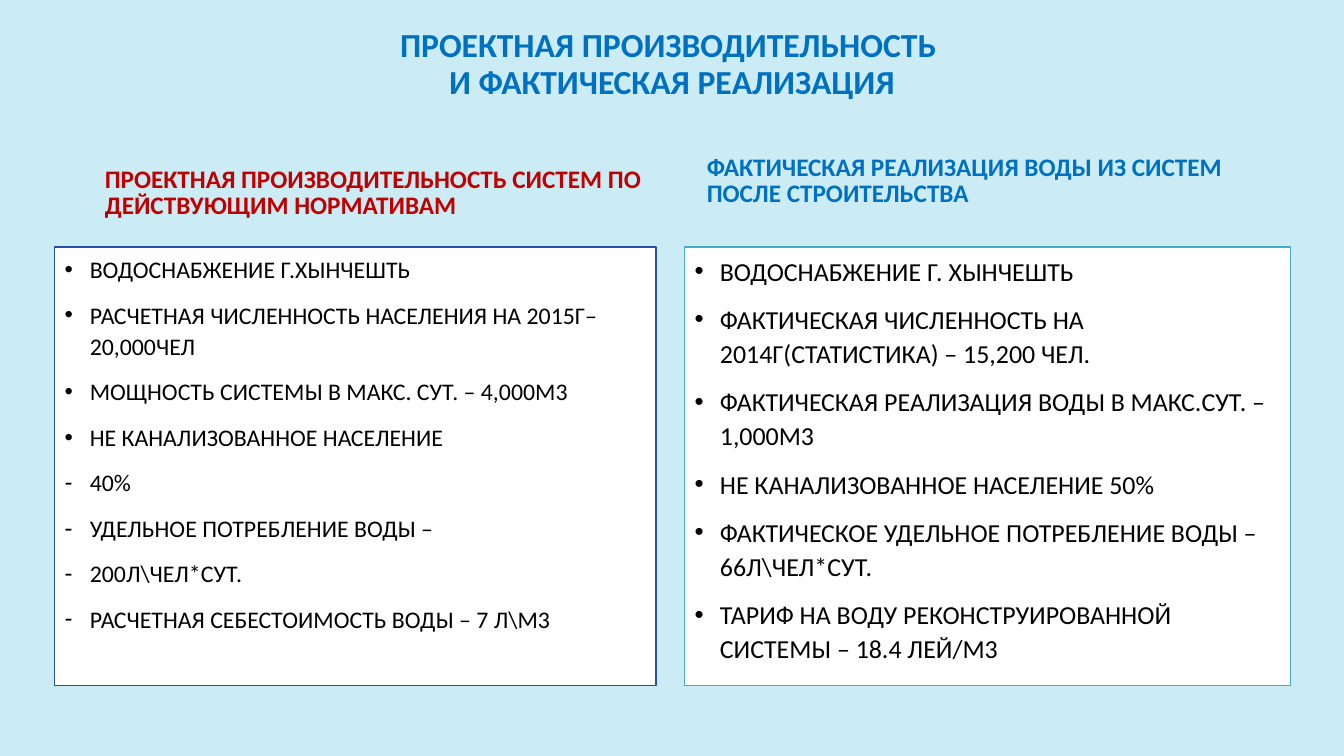
from dataclasses import dataclass

from lxml import etree
from pptx import Presentation
from pptx.dml.color import RGBColor
from pptx.enum import text as t
from pptx.oxml import ns
from pptx.util import Inches, Pt

SKY = RGBColor(0xCB, 0xEC, 0xF5)
BLUE = RGBColor(0x00, 0x70, 0xC0)
RED = RGBColor(0xC0, 0x00, 0x00)
NAVY = RGBColor(0x27, 0x4F, 0xA4)
AQUA = RGBColor(0x48, 0xA8, 0xD0)
WHITE = RGBColor(0xFF, 0xFF, 0xFF)
BLACK = RGBColor(0x00, 0x00, 0x00)
FONT = "Calibri"

Area = tuple[float, float, float, float]


@dataclass
class Column:
    head: str
    tint: RGBColor
    head_area: Area
    list_area: Area
    edge: RGBColor
    size: float
    dots: list[str]
    dashes: list[str]


COLUMNS = [
    Column(
        "ПРОЕКТНАЯ ПРОИЗВОДИТЕЛЬНОСТЬ СИСТЕМ ПО ДЕЙСТВУЮЩИМ НОРМАТИВАМ",
        RED, (0.94, 1.49, 5.58, 0.74), (0.54, 2.45, 5.97, 4.35), NAVY, 17,
        [
            "ВОДОСНАБЖЕНИЕ Г.ХЫНЧЕШТЬ",
            "РАСЧЕТНАЯ ЧИСЛЕННОСТЬ НАСЕЛЕНИЯ НА 2015Г– 20,000ЧЕЛ",
            "МОЩНОСТЬ СИСТЕМЫ В МАКС. СУТ. – 4,000М3",
            "НЕ КАНАЛИЗОВАННОЕ НАСЕЛЕНИЕ",
        ],
        [
            "40%",
            "УДЕЛЬНОЕ ПОТРЕБЛЕНИЕ ВОДЫ –",
            "200Л\\ЧЕЛ*СУТ.",
            "РАСЧЕТНАЯ СЕБЕСТОИМОСТЬ ВОДЫ – 7 Л\\М3",
        ],
    ),
    Column(
        "ФАКТИЧЕСКАЯ РЕАЛИЗАЦИЯ ВОДЫ ИЗ СИСТЕМ ПОСЛЕ СТРОИТЕЛЬСТВА",
        BLUE, (6.91, 1.37, 5.34, 0.74), (6.79, 2.45, 6.01, 4.35), AQUA, 18.5,
        [
            "ВОДОСНАБЖЕНИЕ Г. ХЫНЧЕШТЬ",
            "ФАКТИЧЕСКАЯ ЧИСЛЕННОСТЬ НА 2014Г(СТАТИСТИКА) – 15,200 ЧЕЛ.",
            "ФАКТИЧЕСКАЯ РЕАЛИЗАЦИЯ ВОДЫ В МАКС.СУТ. – 1,000М3",
            "НЕ КАНАЛИЗОВАННОЕ НАСЕЛЕНИЕ 50%",
            "ФАКТИЧЕСКОЕ УДЕЛЬНОЕ ПОТРЕБЛЕНИЕ ВОДЫ – 66Л\\ЧЕЛ*СУТ.",
            "ТАРИФ НА ВОДУ РЕКОНСТРУИРОВАННОЙ СИСТЕМЫ – 18.4 ЛЕЙ/М3",
        ],
        [],
    ),
]


def place(shape, area: Area, anchor: t.MSO_ANCHOR):
    shape.left, shape.top, shape.width, shape.height = map(Inches, area)
    frame = shape.text_frame
    frame.word_wrap = True
    frame.auto_size = t.MSO_AUTO_SIZE.NONE
    frame.vertical_anchor = anchor
    return frame


def write(para, words: str, size: float, color: RGBColor, bold: bool) -> None:
    run = para.add_run()
    run.text = words
    run.font.name = FONT
    run.font.size = Pt(size)
    run.font.bold = bold
    run.font.color.rgb = color


def mark(para, sign: str) -> None:
    props = para._p.get_or_add_pPr()
    props.set("marL", str(Inches(0.25)))
    props.set("indent", str(-Inches(0.25)))
    tint = etree.SubElement(props, ns.qn("a:buClr"))
    etree.SubElement(tint, ns.qn("a:srgbClr"), val=str(BLACK))
    etree.SubElement(props, ns.qn("a:buFont"), typeface="Arial")
    etree.SubElement(props, ns.qn("a:buChar"), char=sign)


def draw_title(shape) -> None:
    frame = place(shape, (1, 0.26, 11.33, 0.77), t.MSO_ANCHOR.MIDDLE)
    para = frame.paragraphs[0]
    para.alignment = t.PP_ALIGN.CENTER
    para.line_spacing = 0.9
    write(para, "ПРОЕКТНАЯ ПРОИЗВОДИТЕЛЬНОСТЬ ", 24, BLUE, True)
    para.add_line_break()
    write(para, "И ФАКТИЧЕСКАЯ РЕАЛИЗАЦИЯ", 24, BLUE, True)


def draw_head(shape, col: Column) -> None:
    para = place(shape, col.head_area, t.MSO_ANCHOR.BOTTOM).paragraphs[0]
    para.alignment = t.PP_ALIGN.LEFT
    para.line_spacing = 0.85
    para.space_before = Pt(0)
    write(para, col.head, 18, col.tint, True)


def draw_list(shape, col: Column) -> None:
    frame = place(shape, col.list_area, t.MSO_ANCHOR.TOP)
    shape.fill.solid()
    shape.fill.fore_color.rgb = WHITE
    shape.line.color.rgb = col.edge
    shape.line.width = Pt(1.25)
    items = [("•", words) for words in col.dots]
    items += [("-", words) for words in col.dashes]
    for i, (sign, words) in enumerate(items):
        para = frame.add_paragraph() if i else frame.paragraphs[0]
        mark(para, sign)
        para.alignment = t.PP_ALIGN.LEFT
        para.line_spacing = 1.1
        para.space_before = Pt(10 if i else 0)
        write(para, words, col.size, BLACK, False)


def main() -> None:
    deck = Presentation()
    deck.slide_width = Inches(13.33)
    deck.slide_height = Inches(7.5)
    slide = deck.slides.add_slide(deck.slide_layouts.get_by_name("Comparison"))
    back = slide.background.fill
    back.solid()
    back.fore_color.rgb = SKY
    title, *slots = slide.placeholders
    draw_title(title)
    for col, head, body in zip(COLUMNS, slots[::2], slots[1::2]):
        draw_head(head, col)
        draw_list(body, col)
    deck.save("out.pptx")


if __name__ == "__main__":
    main()
